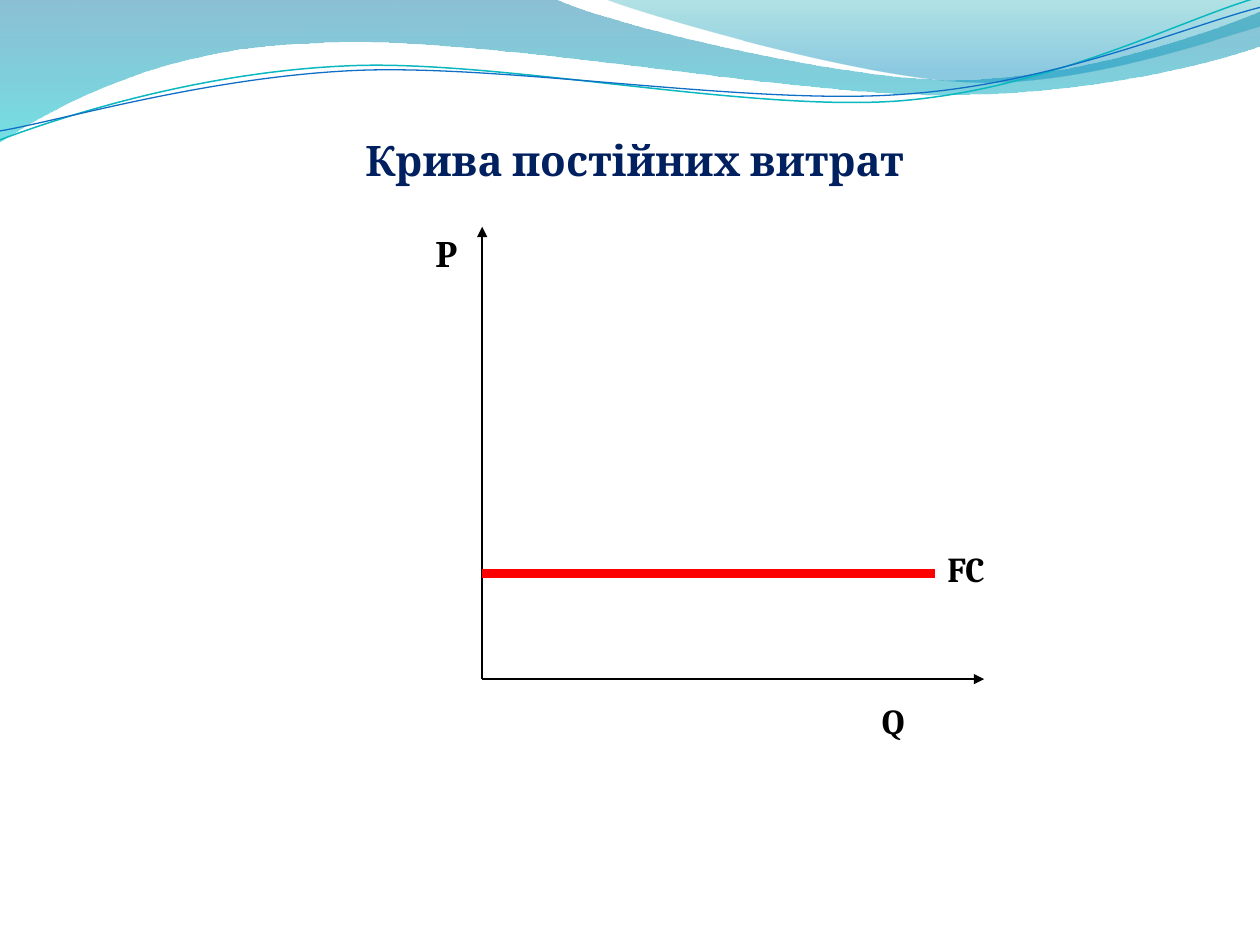
from dataclasses import dataclass

from lxml.etree import SubElement
from pptx import Presentation
from pptx.dml.color import RGBColor
from pptx.enum.shapes import MSO_CONNECTOR as Connector
from pptx.enum.text import MSO_ANCHOR as Anchor, MSO_AUTO_SIZE as AutoSize, PP_ALIGN as Align
from pptx.oxml.ns import qn
from pptx.util import Cm, Pt


@dataclass(frozen=True)
class Theme:
    font: str = "Cambria"
    title_size: int = 24
    label_size: int = 20
    title: str = "002060"
    ink: str = "000000"
    curve: str = "FF0000"
    axis_width: float = 1.5
    curve_width: float = 5


THEME = Theme()

# Content, lengths in centimetres
TITLE = ("Крива постійних витрат", (2.77, 2.59, 20.04, 1.27))
LABELS = [
    ("Р", (8.53, 4.57, 0.99, 1.12)),
    ("Q", (17.53, 13.97, 1.93, 1.12)),
    ("FC", (18.85, 10.92, 1.8, 1.12)),
]
ORIGIN_X, ORIGIN_Y = 9.72, 13.69
AXIS_TOP, AXIS_RIGHT = 4.57, 19.84
COST_Y, COST_RIGHT = 11.56, 18.85

# A segment of one point is straight, one of three points is a Bezier curve.
# Gradient stops: position, colour, opacity in percent
BANDS = [
    ((0, 0), [
        [(11.18, -0.03)],
        [(12.09, 0.43), (16.87, 1.6), (19.25, 1.6)],
        [(21.67, 1.6), (24.33, 0.66), (25.4, 0.23)],
        [(25.43, 0.91)],
        [(24.97, 1.12), (22.1, 1.93), (18.95, 1.91)],
        [(15.8, 1.91), (9.7, 0.71), (6.53, 0.86)],
        [(3.28, 0.91), (1.17, 2.11), (-0.03, 2.87)],
        [(0, 0)],
    ], [(0, "0074A1", 45), (1, "00C6CF", 55)]),
    ((12.17, -0.03), [
        [(12.93, 0.28), (17.32, 1.57), (19.53, 1.65)],
        [(21.74, 1.75), (24.41, 0.81), (25.4, 0.53)],
        [(25.4, 0)],
        [(12.17, -0.03)],
    ], [(0, "00A1A9", 30), (0.8, "008BBF", 45)]),
]
RIPPLE_TILT = -2.7
RIPPLES = [
    ((-0.05, 2.22), [
        [(1.19, 1.82), (4.02, 1.04), (7.05, 1.06)],
        [(10.05, 1.07), (15.02, 2.37), (18.08, 2.29)],
        [(21.13, 2.2), (23.87, 0.91), (25.41, 0.55)],
    ], "0AB8BF", 0.85),
    ((-0.04, 2.04), [
        [(1.16, 1.9), (4.18, 1.15), (7.2, 1.16)],
        [(10.25, 1.18), (15.13, 2.25), (18.18, 2.16)],
        [(21.21, 2.1), (23.93, 1.06), (25.45, 0.75)],
    ], "0F6FC6", 0.75),
]


def add_outline(page, start, segments, close):
    points = [(Cm(x), Cm(y)) for segment in segments for x, y in segment]
    builder = page.shapes.build_freeform(*map(Cm, start))
    builder.add_line_segments(points, close=close)
    shape = builder.convert_to_shape()
    shape.shadow.inherit = False
    # Join each three-point segment into one Bezier curve
    steps = iter(list(shape._element.iter(qn("a:lnTo"))))
    for segment in segments:
        nodes = [next(steps) for _ in segment]
        if len(nodes) == 3:
            nodes[0].tag = qn("a:cubicBezTo")
            for node in nodes[1:]:
                nodes[0].append(node[0])
                node.getparent().remove(node)
    return shape


def add_band(page, start, segments, stops):
    shape = add_outline(page, start, segments, close=True)
    shape.line.fill.background()
    shape.fill.gradient()
    shape.fill.gradient_angle = 270
    for stop, (position, color, _) in zip(shape.fill.gradient_stops, stops):
        stop.position = position
        stop.color.rgb = RGBColor.from_string(color)
    for node, (_, _, opacity) in zip(shape._element.iter(qn("a:gs")), stops):
        SubElement(node[0], qn("a:alpha"), val=str(opacity * 1000))


def add_ripple(page, start, segments, color, width):
    shape = add_outline(page, start, segments, close=False)
    shape.fill.background()
    shape.rotation = RIPPLE_TILT
    style_line(shape.line, color, width)


def style_line(line, color, width):
    line.color.rgb = RGBColor.from_string(color)
    line.width = Pt(width)


def add_line(page, start, end, color, width, arrow=False):
    line = page.shapes.add_connector(Connector.STRAIGHT, *map(Cm, start + end))
    style_line(line.line, color, width)
    if arrow:
        SubElement(line.line._get_or_add_ln(), qn("a:tailEnd"), type="triangle")
    SubElement(line._element.spPr, qn("a:effectLst"))


def write(box, text, place, size, color, align):
    box.left, box.top, box.width, box.height = map(Cm, place)
    frame = box.text_frame
    frame.text = text
    frame.word_wrap = True
    frame.auto_size = AutoSize.SHAPE_TO_FIT_TEXT
    frame.vertical_anchor = Anchor.TOP
    para = frame.paragraphs[0]
    para.alignment = align
    font = para.runs[0].font
    font.name, font.size, font.bold = THEME.font, Pt(size), True
    font.color.rgb = RGBColor.from_string(color)


def main():
    deck = Presentation()
    deck.slide_width, deck.slide_height = Cm(25.4), Cm(19.05)
    page = deck.slides.add_slide(deck.slide_layouts[5])

    # Wave decoration along the top
    for band in BANDS:
        add_band(page, *band)
    for ripple in RIPPLES:
        add_ripple(page, *ripple)

    # Axes and the fixed cost line
    origin = (ORIGIN_X, ORIGIN_Y)
    for end in [(ORIGIN_X, AXIS_TOP), (AXIS_RIGHT, ORIGIN_Y)]:
        add_line(page, origin, end, THEME.ink, THEME.axis_width, arrow=True)
    add_line(page, (ORIGIN_X, COST_Y), (COST_RIGHT, COST_Y), THEME.curve, THEME.curve_width)

    # Title and labels
    write(page.shapes.title, *TITLE, THEME.title_size, THEME.title, Align.CENTER)
    for text, place in LABELS:
        box = page.shapes.add_textbox(*map(Cm, place))
        write(box, text, place, THEME.label_size, THEME.ink, Align.LEFT)

    deck.save("out.pptx")


if __name__ == "__main__":
    main()
